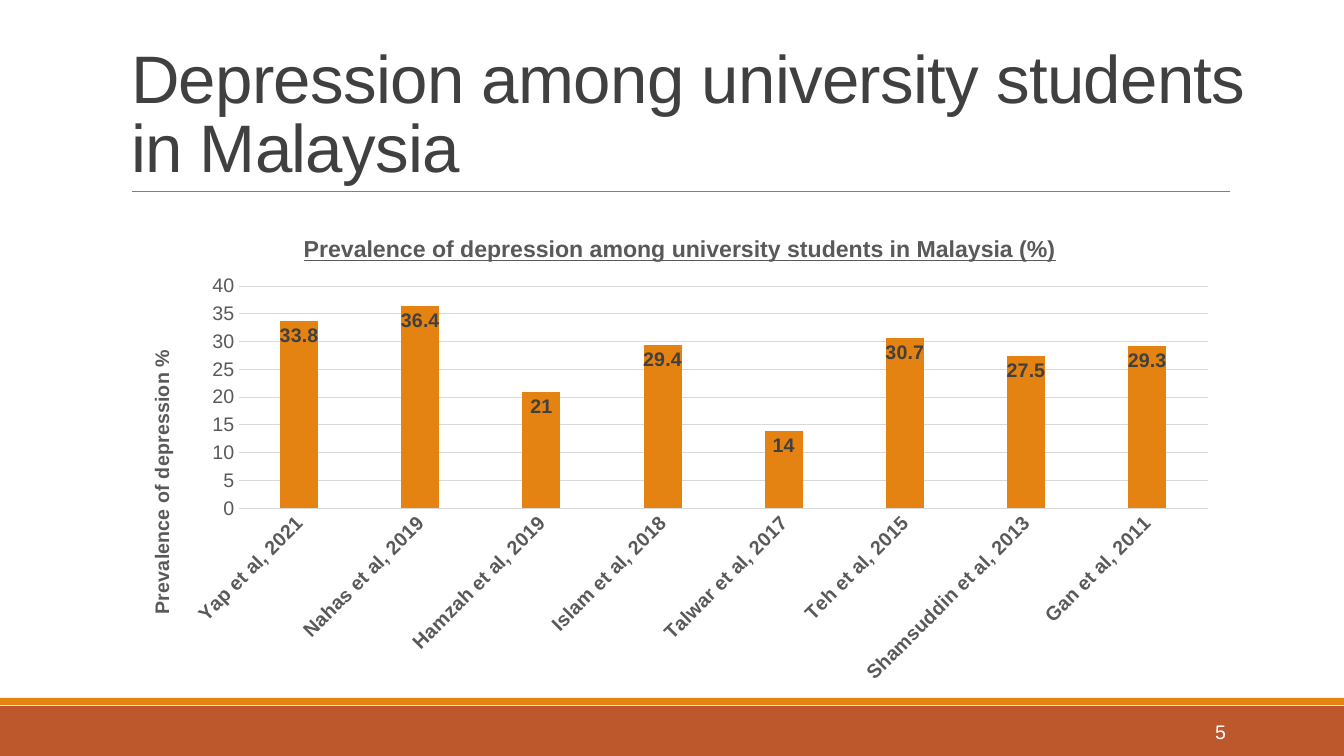
"""Builds the slide on depression among university students in Malaysia."""
from lxml import etree
from pptx import Presentation
from pptx.chart.data import CategoryChartData
from pptx.dml.color import RGBColor
from pptx.enum.chart import XL_CHART_TYPE, XL_LABEL_POSITION, XL_TICK_MARK
from pptx.enum.shapes import MSO_CONNECTOR, MSO_SHAPE
from pptx.enum.text import MSO_ANCHOR, MSO_AUTO_SIZE, PP_ALIGN
from pptx.oxml import parse_xml
from pptx.oxml.ns import nsdecls, qn
from pptx.util import Pt

COLUMNS = XL_CHART_TYPE.COLUMN_CLUSTERED
INSIDE_END = XL_LABEL_POSITION.INSIDE_END
NO_TICK = XL_TICK_MARK.NONE
STRAIGHT = MSO_CONNECTOR.STRAIGHT
RECTANGLE = MSO_SHAPE.RECTANGLE
MIDDLE, BOTTOM = MSO_ANCHOR.MIDDLE, MSO_ANCHOR.BOTTOM
LEFT, RIGHT = PP_ALIGN.LEFT, PP_ALIGN.RIGHT

RUST = RGBColor(0xBD, 0x58, 0x2C)
ORANGE = RGBColor(0xE4, 0x83, 0x12)
DARK = RGBColor(0x40, 0x40, 0x40)
GREY = RGBColor(0x59, 0x59, 0x59)
RULE_GREY = RGBColor(0x80, 0x80, 0x80)
GRID_GREY = RGBColor(0xD9, 0xD9, 0xD9)
WHITE = RGBColor(0xFF, 0xFF, 0xFF)

SLIDE_WIDTH, SLIDE_HEIGHT = 1344, 756
SCALE = 12192000 / SLIDE_WIDTH
PREVALENCE = {
    "Yap et al, 2021": 33.8,
    "Nahas et al, 2019": 36.4,
    "Hamzah et al, 2019": 21,
    "Islam et al, 2018": 29.4,
    "Talwar et al, 2017": 14,
    "Teh et al, 2015": 30.7,
    "Shamsuddin et al, 2013": 27.5,
    "Gan et al, 2011": 29.3,
}


def box(*lengths):
    return [round(length * SCALE) for length in lengths]


def style(font, size, color, bold=False):
    font.name, font.size, font.bold = "Arial", Pt(size), bold
    font.color.rgb = color


deck = Presentation()
deck.slide_width, deck.slide_height = box(SLIDE_WIDTH, SLIDE_HEIGHT)
slide = deck.slides.add_slide(deck.slide_layouts[5])

for top, height, color in ((706, 50, RUST), (698, 7, ORANGE)):
    band = slide.shapes.add_shape(RECTANGLE, *box(0, top, SLIDE_WIDTH, height))
    band.shadow.inherit = False
    band.fill.solid()
    band.fill.fore_color.rgb = color
    band.line.fill.background()

title_rule = slide.shapes.add_connector(STRAIGHT, *box(132, 191, 1230, 191))
title_rule.line.color.rgb = RULE_GREY
title_rule.line.width = Pt(0.5)
etree.SubElement(title_rule._element.spPr, qn("a:effectLst"))

heading = slide.shapes.title
heading.left, heading.top, heading.width, heading.height = box(121, 31, 1165, 160)
heading.text_frame.word_wrap = True
heading.text_frame.auto_size = MSO_AUTO_SIZE.NONE
heading.text_frame.vertical_anchor = BOTTOM
heading_line = heading.text_frame.paragraphs[0]
heading_line.alignment = LEFT
heading_line.line_spacing = 0.85
heading_run = heading_line.add_run()
heading_run.text = "Depression among university students in Malaysia"
style(heading_run.font, 48, DARK)
heading_run.font._element.set("spc", "-50")

page_number = slide.shapes.add_textbox(*box(1092, 712, 144, 40)).text_frame
page_number.word_wrap = True
page_number.vertical_anchor = MIDDLE
page_line = page_number.paragraphs[0]
page_line.alignment = RIGHT
page_run = page_line.add_run()
page_run.text = "5"
style(page_run.font, 14, WHITE)

studies = CategoryChartData()
studies.categories = list(PREVALENCE)
studies.add_series("Prevalence", list(PREVALENCE.values()))
chart = slide.shapes.add_chart(COLUMNS, *box(121, 210, 1109, 485), studies).chart
style(chart.font, 14, GREY)
chart.has_legend = False

plot = chart.plots[0]
plot.vary_by_categories = False
plot.gap_width, plot.overlap = 219, -27
bars = plot.series[0]
bars.format.fill.solid()
bars.format.fill.fore_color.rgb = ORANGE
labels = bars.data_labels
labels.show_value = True
labels.position = INSIDE_END
style(labels.font, 14, DARK, True)

study_axis, percent_axis = chart.category_axis, chart.value_axis
for axis in (study_axis, percent_axis):
    axis.major_tick_mark = axis.minor_tick_mark = NO_TICK
    style(axis.tick_labels.font, 14, GREY, axis is study_axis)
study_axis.format.line.color.rgb = GRID_GREY
study_axis.format.line.width = Pt(0.75)
study_axis._element.find(qn("c:txPr")).find(qn("a:bodyPr")).set("rot", "-2700000")
percent_axis.format.line.fill.background()
percent_axis.minimum_scale, percent_axis.maximum_scale = 0, 40
percent_axis.major_unit = 5
percent_axis.major_gridlines.format.line.color.rgb = GRID_GREY
percent_axis.major_gridlines.format.line.width = Pt(0.75)

for owner, words, size in (
    (chart, "Prevalence of depression among university students in Malaysia (%)", 16.5),
    (percent_axis, "Prevalence of depression %", 14),
):
    owner.has_title = True
    caption = owner.chart_title if owner is chart else owner.axis_title
    caption_run = caption.text_frame.paragraphs[0].add_run()
    caption_run.text = words
    style(caption_run.font, size, GREY, True)
    caption_run.font.underline = owner is chart
chart.chart_title.include_in_layout = False
percent_title = percent_axis.axis_title
percent_title.text_frame._txBody.find(qn("a:bodyPr")).set("rot", "-5400000")

plot_area = chart._chartSpace.chart.plotArea
for part, inner, places in (
    (chart.chart_title._element, "", {"x": 178 / 1109, "y": 20 / 485}),
    (percent_title._element, "", {"x": 24 / 1109, "y": 136 / 485}),
    (plot_area, '<c:layoutTarget val="inner"/>',
     {"x": 118 / 1109, "y": 76 / 485, "w": 969 / 1109, "h": 222 / 485}),
):
    for automatic in part.findall(qn("c:layout")):
        part.remove(automatic)
    modes = "".join(f'<c:{side}Mode val="edge"/>' for side in "xy")
    values = "".join(f'<c:{side} val="{place:.3f}"/>' for side, place in places.items())
    layout = parse_xml(
        f'<c:layout {nsdecls("c")}><c:manualLayout>{inner}{modes}{values}'
        "</c:manualLayout></c:layout>"
    )
    part.insert(0 if part is plot_area else 1, layout)

deck.save("out.pptx")
